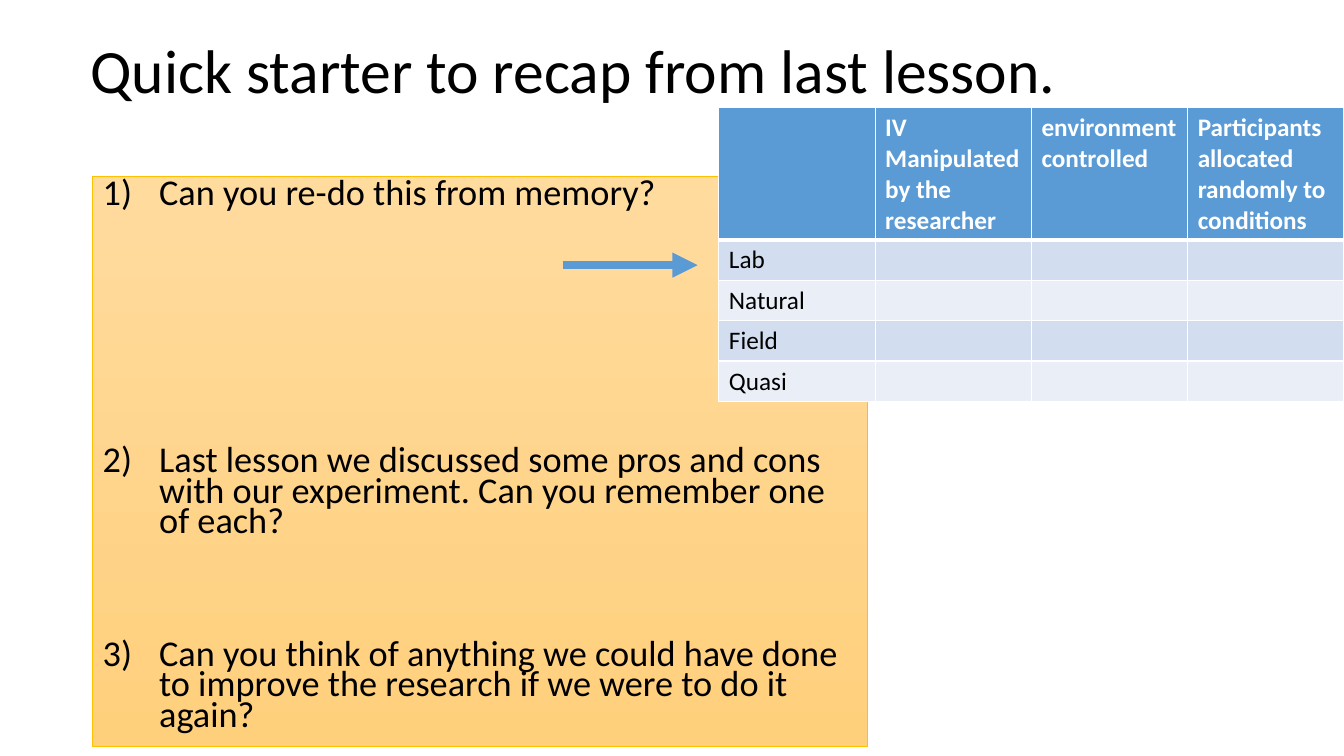
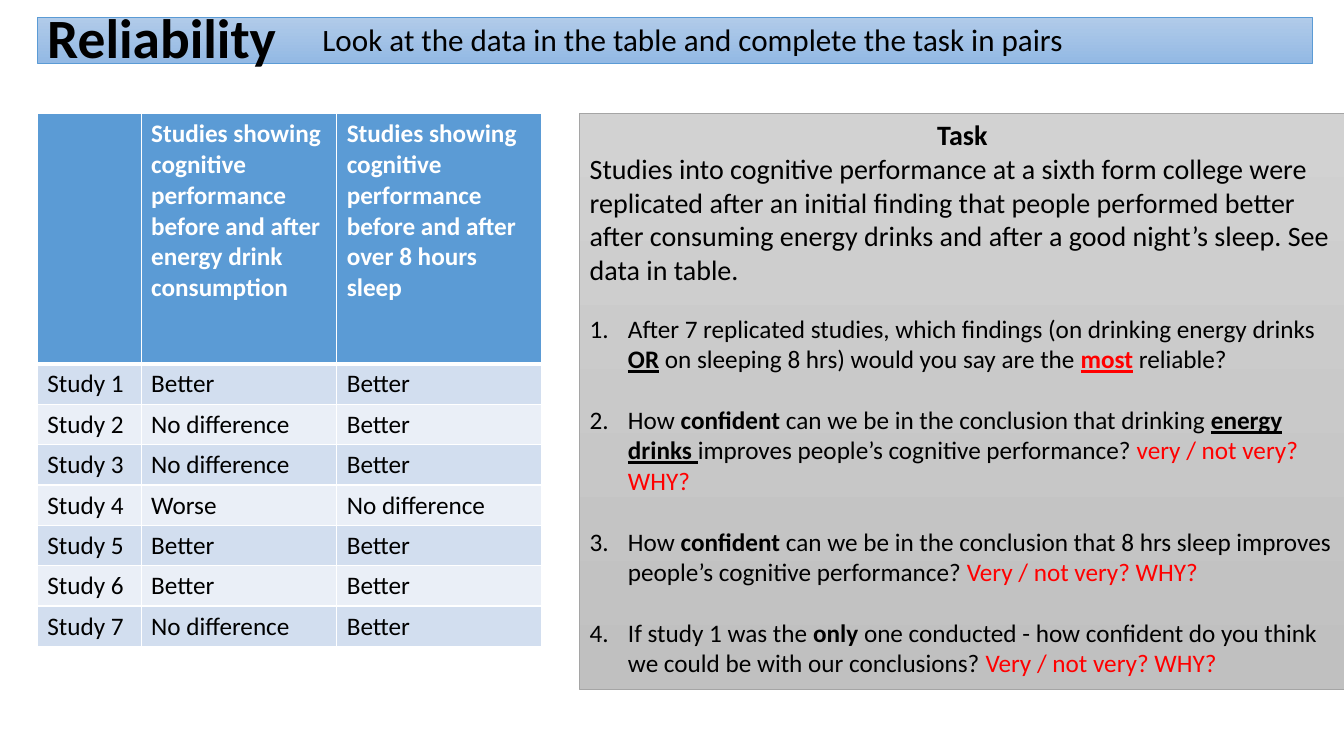
import pptx
import pptx.dml.color
import pptx.enum.shapes
import pptx.enum.text
import pptx.oxml
import pptx.oxml.ns
import pptx.util
import lxml.etree

Inches = pptx.util.Inches
Pt = pptx.util.Pt
RGBColor = pptx.dml.color.RGBColor
ALIGN = pptx.enum.text.PP_ALIGN
ANCHOR = pptx.enum.text.MSO_ANCHOR
qn = pptx.oxml.ns.qn

FONT = "Calibri"
BLACK = RGBColor(0x00, 0x00, 0x00)
WHITE = RGBColor(0xFF, 0xFF, 0xFF)
RED = RGBColor(0xFF, 0x00, 0x00)
BLUE = RGBColor(0x5B, 0x9B, 0xD5)
BAND_DARK = RGBColor(0xD2, 0xDE, 0xEF)
BAND_LIGHT = RGBColor(0xEA, 0xEF, 0xF7)
GOLD = RGBColor(0xFF, 0xC0, 0x00)
GOLD_TOP = RGBColor(0xFF, 0xDB, 0x9E)
GOLD_BOTTOM = RGBColor(0xFF, 0xD0, 0x7C)
BLUE_TOP = RGBColor(0xB1, 0xCB, 0xE9)
BLUE_BOTTOM = RGBColor(0x93, 0xB9, 0xE4)
GREY = RGBColor(0xA5, 0xA5, 0xA5)
GREY_TOP = RGBColor(0xD2, 0xD2, 0xD2)
GREY_BOTTOM = RGBColor(0xC0, 0xC0, 0xC0)


def add_run(p, text, size, color=BLACK, bold=False, underline=False):
    r = p.add_run()
    r.text = text
    r.font.name = FONT
    r.font.size = Pt(size)
    r.font.color.rgb = color
    r.font.bold = bold
    r.font.underline = underline


def prepare_frame(shape, anchor=ANCHOR.TOP):
    tf = shape.text_frame
    tf.word_wrap = True
    tf.vertical_anchor = anchor
    return tf


def add_paragraph(tf, first=False, spacing=1.0, before=0, align=ALIGN.LEFT):
    p = tf.paragraphs[0] if first else tf.add_paragraph()
    p.line_spacing = spacing
    p.space_before = Pt(before)
    p.alignment = align
    return p


def number_paragraph(p, scheme, start, indent):
    pPr = p._p.get_or_add_pPr()
    pPr.set("marL", str(Inches(indent)))
    pPr.set("indent", str(-Inches(indent)))
    bullet = lxml.etree.SubElement(pPr, qn("a:buAutoNum"))
    bullet.set("type", scheme)
    bullet.set("startAt", str(start))


def add_text(s, x, y, w, h, text, size, spacing, anchor=ANCHOR.TOP):
    box = s.shapes.add_textbox(Inches(x), Inches(y), Inches(w), Inches(h))
    tf = prepare_frame(box, anchor)
    add_run(add_paragraph(tf, True, spacing), text, size)


def add_panel(s, x, y, w, h, top, bottom, outline, anchor=ANCHOR.TOP):
    sp = s.shapes.add_shape(pptx.enum.shapes.MSO_SHAPE.RECTANGLE,
                            Inches(x), Inches(y), Inches(w), Inches(h))
    sp.shadow.inherit = False
    sp.fill.gradient()
    sp.fill.gradient_angle = 270
    for stop, color in zip(sp.fill.gradient_stops, (top, bottom)):
        stop.color.rgb = color
        stop.position = 0 if color == top else 1
    sp.line.color.rgb = outline
    sp.line.width = Pt(0.5)
    return prepare_frame(sp, anchor)


def add_border(tcPr, side, width):
    ln = lxml.etree.SubElement(tcPr, qn("a:ln" + side))
    ln.set("w", str(Pt(width)))
    fill = lxml.etree.SubElement(ln, qn("a:solidFill"))
    lxml.etree.SubElement(fill, qn("a:srgbClr")).set("val", str(WHITE))


def style_cell(cell, row, text):
    tcPr = cell._tc.get_or_add_tcPr()
    widths = {"L": 1, "R": 1, "T": 3 if row == 1 else 1, "B": 3 if row == 0 else 1}
    for side, width in widths.items():
        add_border(tcPr, side, width)
    header = row == 0
    cell.fill.solid()
    cell.fill.fore_color.rgb = BLUE if header else (BAND_LIGHT, BAND_DARK)[row % 2]
    if text:
        add_run(cell.text_frame.paragraphs[0], text, 18, WHITE if header else BLACK, header)


def add_grid(s, x, y, widths, header_height, row_height, rows):
    height = header_height + row_height * (len(rows) - 1)
    table = s.shapes.add_table(len(rows), len(widths), Inches(x), Inches(y),
                               Inches(sum(widths)), Inches(height)).table
    for col, width in zip(table.columns, widths):
        col.width = Inches(width)
    for i, values in enumerate(rows):
        table.rows[i].height = Inches(row_height if i else header_height)
        for j, text in enumerate(values):
            style_cell(table.cell(i, j), i, text)


def add_arrow(s, x1, y1, x2, y2):
    line = s.shapes.add_connector(pptx.enum.shapes.MSO_CONNECTOR.STRAIGHT,
                                  Inches(x1), Inches(y1), Inches(x2), Inches(y2))
    line.line.color.rgb = BLUE
    line.line.width = Pt(6)
    lxml.etree.SubElement(line.line._get_or_add_ln(), qn("a:tailEnd")).set("type", "triangle")
    lxml.etree.SubElement(line._element.spPr, qn("a:effectLst"))


def build_starter(prs):
    s = prs.slides.add_slide(prs.slide_layouts[6])
    add_text(s, 0.8, 0, 11.5, 1.45, "Quick starter to recap from last lesson.",
             44, 0.9, ANCHOR.MIDDLE)
    tf = add_panel(s, 0.92, 1.75, 7.68, 5.66, GOLD_TOP, GOLD_BOTTOM, GOLD)
    questions = [
        (0, "Can you re-do this from memory?"),
        (169, "Last lesson we discussed some pros and cons with our experiment. "
              "Can you remember one of each?"),
        (73, "Can you think of anything we could have done to improve the research "
             "if we were to do it again?"),
    ]
    for n, (before, text) in enumerate(questions, 1):
        p = add_paragraph(tf, n == 1, 0.7, before)
        number_paragraph(p, "arabicParenR", n, 0.56)
        add_run(p, text, 25.9)
    header = ["", "IV Manipulated by the researcher", "environment controlled",
              "Participants allocated randomly to conditions"]
    kinds = ["Lab", "Natural", "Field", "Quasi"]
    add_grid(s, 7.13, 1.07, [1.55] * 4, 1.31, 0.4,
             [header] + [[kind, "", "", ""] for kind in kinds])
    add_arrow(s, 5.58, 2.63, 6.92, 2.63)


def build_reliability(prs):
    s = prs.slides.add_slide(prs.slide_layouts[6])
    tf = add_panel(s, 0.37, 0.17, 12.65, 0.46, BLUE_TOP, BLUE_BOTTOM, BLUE, ANCHOR.MIDDLE)
    add_run(add_paragraph(tf, True, 0.9), "Reliability", 39.6, bold=True)
    add_text(s, 3.1, 0.22, 9.9, 0.41,
             "Look at the data in the table and complete the task in pairs", 22.2, 0.8)

    tf = add_panel(s, 5.75, 1.12, 7.59, 5.72, GREY_TOP, GREY_BOTTOM, GREY)
    add_run(add_paragraph(tf, True, align=ALIGN.CENTER), "Task", 20, bold=True)
    add_run(add_paragraph(tf),
            "Studies into cognitive performance at a sixth form college were replicated "
            "after an initial finding that people performed better after consuming energy "
            "drinks and after a good night’s sleep. See data in table.", 20)
    plain, strong = {}, {"bold": True}
    key = {"bold": True, "underline": True}
    red = {"color": RED}
    questions = [
        [("After 7 replicated studies, which findings (on drinking energy drinks ", plain),
         ("OR", key), (" on sleeping 8 hrs) would you say are the ", plain),
         ("most", {**key, **red}), (" reliable?", plain)],
        [("How ", plain), ("confident", strong),
         (" can we be in the conclusion that drinking ", plain), ("energy drinks ", key),
         ("improves people’s cognitive performance? ", plain),
         ("very / not very? WHY?", red)],
        [("How ", plain), ("confident", strong),
         (" can we be in the conclusion that 8 hrs sleep improves people’s cognitive "
          "performance? ", plain), ("Very / not very? WHY?", red)],
        [("If study 1 was the ", plain), ("only ", strong),
         ("one conducted - how confident do you think we could be with our "
          "conclusions? ", plain), ("Very / not very? WHY?", red)],
    ]
    for n, runs in enumerate(questions, 1):
        p = add_paragraph(tf, before=19.5 if n == 1 else 22)
        number_paragraph(p, "arabicPeriod", n, 0.38)
        for text, style in runs:
            add_run(p, text, 18, **style)

    same, better, worse = "No difference", "Better", "Worse"
    results = [(better, better), (same, better), (same, better), (worse, same),
               (better, better), (better, better), (same, better)]
    stem = "Studies showing cognitive performance before and after "
    header = ["", stem + "energy drink consumption", stem + "over 8 hours sleep"]
    add_grid(s, 0.37, 1.13, [1.03, 1.94, 2.03], 2.48, 0.4,
             [header] + [[f"Study {n}", *pair] for n, pair in enumerate(results, 1)])


def main():
    prs = pptx.Presentation()
    prs.slide_width = Inches(13.33)
    prs.slide_height = Inches(7.5)
    build_starter(prs)
    build_reliability(prs)
    prs.save("out.pptx")


if __name__ == "__main__":
    main()
